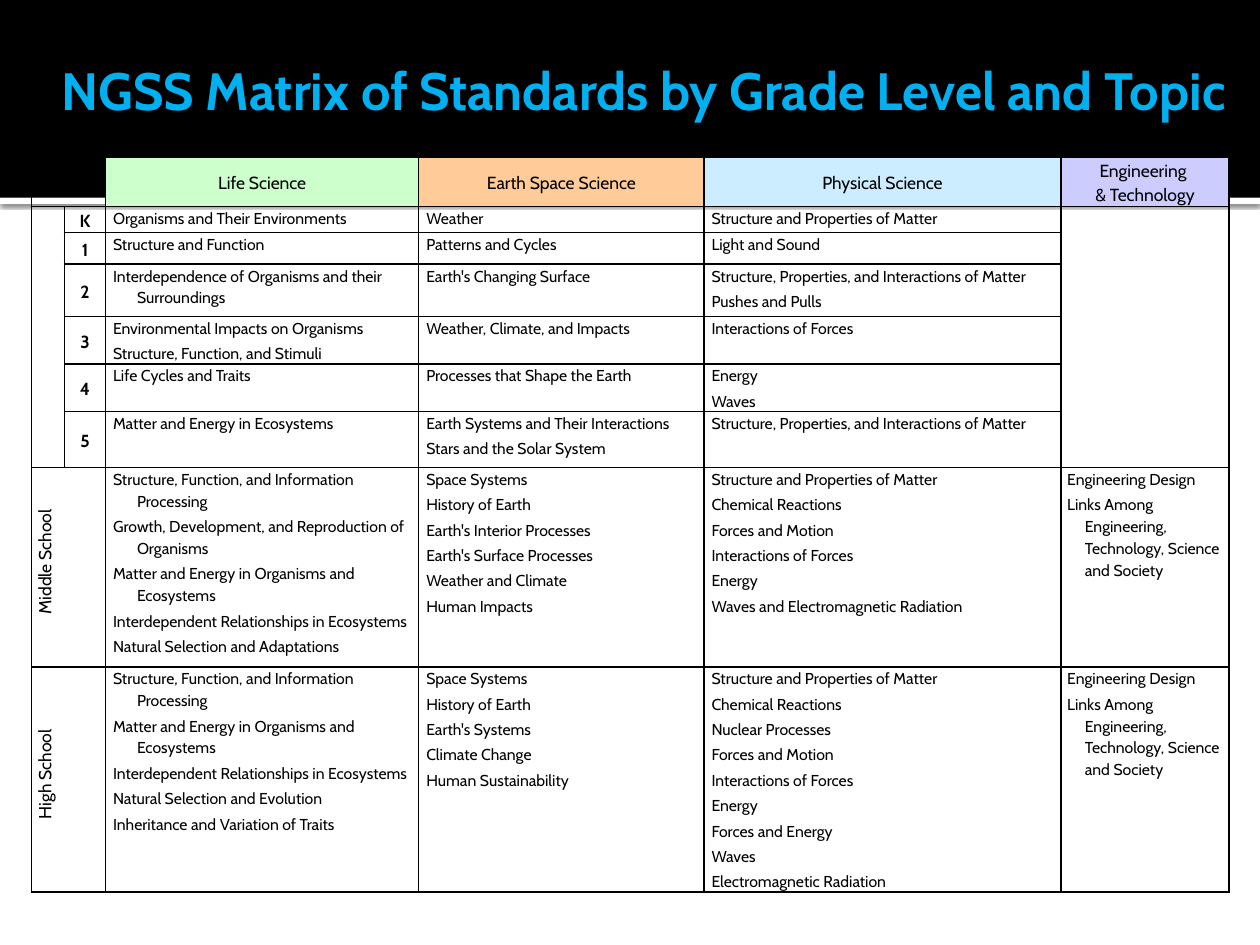
from lxml import etree
from pptx import Presentation
from pptx import util as u
from pptx.dml import color
from pptx.enum import shapes, text
from pptx.oxml import ns

FONT = "Cabin"
COLUMNS = [18.8, 23.5, 179, 163, 204, 96]
ROWS = [26.6, 15, 18, 30, 26, 26, 32, 114, 128]
HEADERS = [
    ("Life Science", "CCFFCC"),
    ("Earth Space Science", "FFCC99"),
    ("Physical Science", "CCECFF"),
    ("Engineering \n& Technology", "CCCCFF"),
]
# Grade, then the topics of life, earth space and physical science
GRADES = [
    ("K", ["Organisms and Their Environments"], ["Weather"],
     ["Structure and Properties of Matter"]),
    ("1", ["Structure and Function"], ["Patterns and Cycles"], ["Light and Sound"]),
    ("2", ["Interdependence of Organisms and their Surroundings"],
     ["Earth's Changing Surface"],
     ["Structure, Properties, and Interactions of Matter", "Pushes and Pulls"]),
    ("3", ["Environmental Impacts on Organisms", "Structure, Function, and Stimuli"],
     ["Weather, Climate, and Impacts"], ["Interactions of Forces"]),
    ("4", ["Life Cycles and Traits"], ["Processes that Shape the Earth"],
     ["Energy", "Waves"]),
    ("5", ["Matter and Energy in Ecosystems"],
     ["Earth Systems and Their Interactions", "Stars and the Solar System"],
     ["Structure, Properties, and Interactions of Matter"]),
]
ENGINEERING = ["Engineering Design",
               "Links Among Engineering, Technology, Science and Society"]
SCHOOLS = [
    ("Middle School",
     ["Structure, Function, and Information Processing",
      "Growth, Development, and Reproduction of Organisms",
      "Matter and Energy in Organisms and Ecosystems",
      "Interdependent Relationships in Ecosystems",
      "Natural Selection and Adaptations"],
     ["Space Systems", "History of Earth", "Earth's Interior Processes",
      "Earth's Surface Processes", "Weather and Climate", "Human Impacts"],
     ["Structure and Properties of Matter", "Chemical Reactions",
      "Forces and Motion", "Interactions of Forces", "Energy",
      "Waves and Electromagnetic Radiation"]),
    ("High School",
     ["Structure, Function, and Information Processing",
      "Matter and Energy in Organisms and Ecosystems",
      "Interdependent Relationships in Ecosystems",
      "Natural Selection and Evolution", "Inheritance and Variation of Traits"],
     ["Space Systems", "History of Earth", "Earth's Systems", "Climate Change",
      "Human Sustainability"],
     ["Structure and Properties of Matter", "Chemical Reactions",
      "Nuclear Processes", "Forces and Motion", "Interactions of Forces",
      "Energy", "Forces and Energy", "Waves", "Electromagnetic Radiation"]),
]


def rgb(value):
    return color.RGBColor.from_string(value)


def child(parent, tag, **attributes):
    return etree.SubElement(parent, ns.qn(tag), attributes)


def style(para, size, colour="000000", bold=False):
    para.font.name = FONT
    para.font.size = u.Pt(size)
    para.font.bold = bold
    para.font.color.rgb = rgb(colour)


def add_bar(page, top, height, colour):
    bar = page.shapes.add_shape(shapes.MSO_SHAPE.RECTANGLE, 0, u.Pt(top),
                                u.Pt(720), u.Pt(height))
    bar.shadow.inherit = False
    bar.fill.solid()
    bar.fill.fore_color.rgb = rgb(colour)
    bar.line.fill.background()
    return bar


def add_soft_shadow(shape):
    effects = shape.element.spPr.find(ns.qn("a:effectLst"))
    shadow = child(effects, "a:outerShdw", blurRad=str(u.Pt(2.5)),
                   dist=str(u.Pt(0.8)), dir="5400000", rotWithShape="0")
    child(child(shadow, "a:srgbClr", val="000000"), "a:alpha", val="60000")


def place_title(page, words):
    title = page.shapes.title
    title.left, title.top = u.Pt(24), u.Pt(0)
    title.width, title.height = u.Pt(684), u.Pt(102)
    frame = title.text_frame
    frame.margin_left = u.Pt(7.2)
    frame.margin_right = frame.margin_top = frame.margin_bottom = u.Pt(3.6)
    frame.vertical_anchor = text.MSO_ANCHOR.MIDDLE
    frame.auto_size = text.MSO_AUTO_SIZE.NONE
    para = frame.paragraphs[0]
    para.text = words
    para.alignment = text.PP_ALIGN.CENTER
    style(para, 30, "00B0F0", bold=True)
    page.shapes.element.append(title.element)  # in front of the bars


def format_cell(cell):
    cell.margin_left = cell.margin_right = u.Pt(3.6)
    cell.margin_top = cell.margin_bottom = 0
    properties = cell._tc.get_or_add_tcPr()
    for side in ("a:lnL", "a:lnR", "a:lnT", "a:lnB"):
        line = child(properties, side, w=str(u.Pt(1)))
        child(child(line, "a:solidFill"), "a:srgbClr", val="000000")
    cell.fill.background()
    style(cell.text_frame.paragraphs[0], 9)


def fill_label(cell, words, bold=False):
    cell.vertical_anchor = text.MSO_ANCHOR.MIDDLE
    para = cell.text_frame.paragraphs[0]
    para.text = words
    para.alignment = text.PP_ALIGN.CENTER
    para.line_spacing = 1.15
    style(para, 10, bold=bold)


def fill_topics(cell, topics, left=14.4, hanging=13.7):
    frame = cell.text_frame
    for index, topic in enumerate(topics):
        para = frame.add_paragraph() if index else frame.paragraphs[0]
        para.text = topic
        para.line_spacing = 1.15
        para.space_before = u.Pt(1 if index else 0)
        para.space_after = u.Pt(1)
        properties = para._p.get_or_add_pPr()
        properties.set("marL", str(u.Pt(left)))
        properties.set("indent", str(-u.Pt(hanging)))
        style(para, 9)


def add_matrix(page):
    frame = page.shapes.add_table(len(ROWS), len(COLUMNS), u.Pt(18), u.Pt(90),
                                  u.Pt(sum(COLUMNS)), u.Pt(sum(ROWS)))
    table = frame.table
    table.first_row = table.horz_banding = False
    for column, width in zip(table.columns, COLUMNS):
        column.width = u.Pt(width)
    for row, height in zip(table.rows, ROWS):
        row.height = u.Pt(height)
    for cell in table.iter_cells():
        format_cell(cell)

    # Header row
    table.cell(0, 0).merge(table.cell(0, 1))
    for column, (words, colour) in enumerate(HEADERS, 2):
        cell = table.cell(0, column)
        fill_label(cell, words)
        cell.fill.solid()
        cell.fill.fore_color.rgb = rgb(colour)

    # Elementary grades, between two tall empty cells
    last_grade = len(GRADES)
    for column in (0, 5):
        table.cell(1, column).merge(table.cell(last_grade, column))
    for row, (grade, *subjects) in enumerate(GRADES, 1):
        fill_label(table.cell(row, 1), grade, bold=True)
        for column, topics in enumerate(subjects, 2):
            fill_topics(table.cell(row, column), topics)

    # Middle and high school
    for row, (school, *subjects) in enumerate(SCHOOLS, last_grade + 1):
        label = table.cell(row, 0)
        label.merge(table.cell(row, 1))
        fill_label(label, school)
        label._tc.get_or_add_tcPr().set("vert", "vert270")
        label.text_frame.paragraphs[0]._p.get_or_add_pPr().set("marL", str(u.Pt(5.8)))
        for column, topics in enumerate(subjects, 2):
            fill_topics(table.cell(row, column), topics)
        fill_topics(table.cell(row, 5), ENGINEERING, left=10.1, hanging=10.1)


def main():
    deck = Presentation()
    deck.slide_width, deck.slide_height = u.Pt(720), u.Pt(540)
    page = deck.slides.add_slide(deck.slide_layouts[5])
    # White edge with a shadow under the black title band
    add_soft_shadow(add_bar(page, 113, 3.6, "FFFFFF"))
    add_bar(page, 0, 113, "000000")
    place_title(page, "NGSS Matrix of Standards by Grade Level and Topic")
    add_matrix(page)
    deck.save("out.pptx")


if __name__ == "__main__":
    main()
